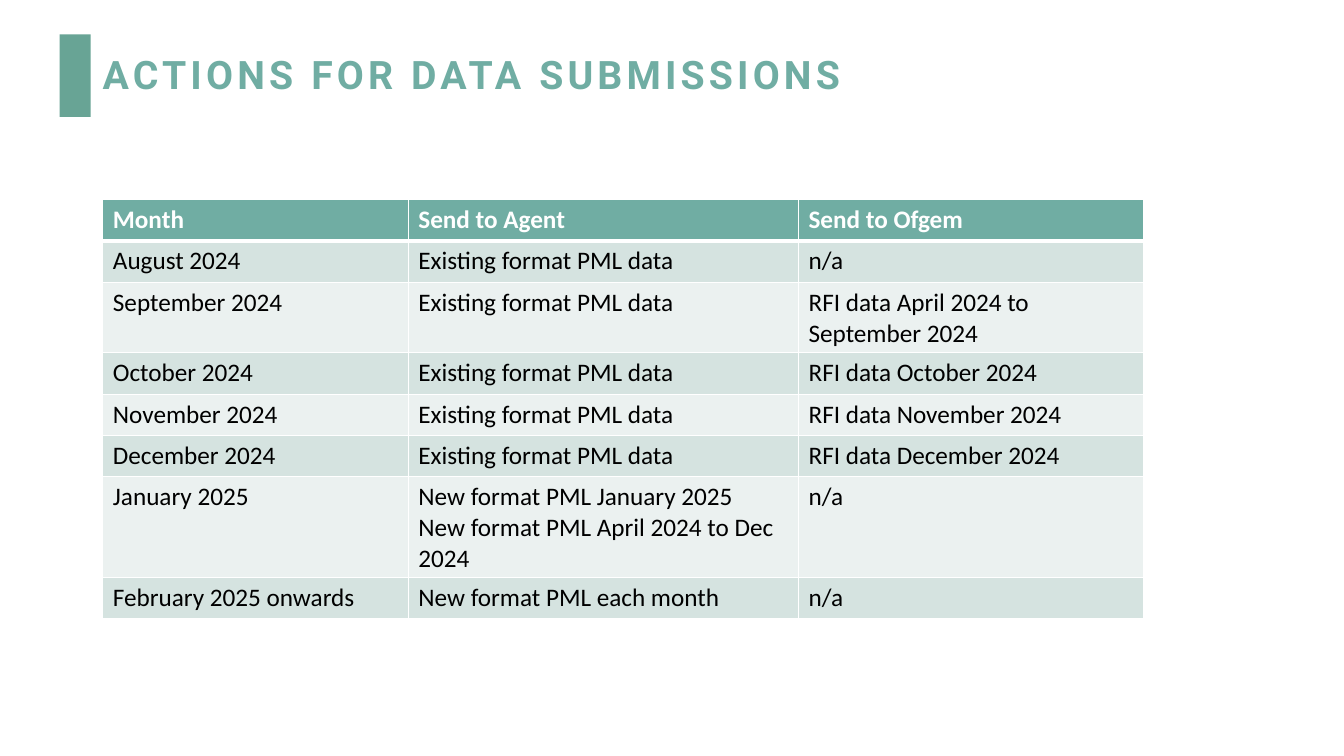
from dataclasses import dataclass

from lxml import etree
from pptx import Presentation
from pptx.dml.color import RGBColor
from pptx.enum.shapes import MSO_SHAPE
from pptx.enum.text import MSO_ANCHOR
from pptx.oxml.ns import qn
from pptx.util import Emu, Pt

RECTANGLE = MSO_SHAPE.RECTANGLE
MIDDLE = MSO_ANCHOR.MIDDLE
EMU_PER_PX = 9144
BLANK_LAYOUT = 6


@dataclass(frozen=True)
class Theme:
    accent: str = "68A495"
    heading: str = "70ADA3"
    bands: tuple = ("D5E3E0", "EBF1F0")
    white: str = "FFFFFF"
    black: str = "000000"
    title_font: str = "Roboto"
    body_font: str = "Calibri"
    title_size: int = 28
    body_size: int = 18
    title_tracking: int = 3
    border: int = 1
    header_border: int = 3


HEADER = ("Month", "Send to Agent", "Send to Ofgem")
EXISTING = "Existing format PML data"
SCHEDULE = (
    ("August 2024", EXISTING, "n/a"),
    ("September 2024", EXISTING, "RFI data April 2024 to September 2024"),
    ("October 2024", EXISTING, "RFI data October 2024"),
    ("November 2024", EXISTING, "RFI data November 2024"),
    ("December 2024", EXISTING, "RFI data December 2024"),
    ("January 2025",
     "New format PML January 2025\nNew format PML April 2024 to Dec 2024", "n/a"),
    ("February 2025 onwards", "New format PML each month", "n/a"),
)
COLUMN_WIDTHS = (303, 387, 342)
ROW_HEIGHT = 41


def px(length):
    return Emu(length * EMU_PER_PX)


class SlideBuilder:
    def __init__(self, slide, theme):
        self.slide = slide
        self.theme = theme

    def add_run(self, paragraph, text, font, size, color, bold=False):
        run = paragraph.add_run()
        run.text = text
        run.font.name = font
        run.font.size = Pt(size)
        run.font.bold = bold
        run.font.color.rgb = RGBColor.from_string(color)
        return run

    def add_bar(self, left, top, width, height):
        bar = self.slide.shapes.add_shape(
            RECTANGLE, px(left), px(top), px(width), px(height))
        bar.shadow.inherit = False
        bar.fill.solid()
        bar.fill.fore_color.rgb = RGBColor.from_string(self.theme.accent)
        bar.line.fill.background()

    def add_title(self, text, left, top, width, height):
        theme = self.theme
        box = self.slide.shapes.add_textbox(px(left), px(top), px(width), px(height))
        frame = box.text_frame
        frame.word_wrap = True
        frame.vertical_anchor = MIDDLE
        paragraph = frame.paragraphs[0]
        paragraph.line_spacing = 0.9
        run = self.add_run(paragraph, text, theme.title_font, theme.title_size,
                           theme.heading, bold=True)
        run._r.get_or_add_rPr().set("spc", str(theme.title_tracking * 100))

    def add_borders(self, cell, top, bottom):
        """Draw white cell borders; top and bottom widths are in points."""
        properties = cell._tc.get_or_add_tcPr()
        side = self.theme.border
        for tag, width in (("lnL", side), ("lnR", side), ("lnT", top), ("lnB", bottom)):
            line = etree.SubElement(properties, qn(f"a:{tag}"), w=str(Pt(width)))
            fill = etree.SubElement(line, qn("a:solidFill"))
            etree.SubElement(fill, qn("a:srgbClr"), val=self.theme.white)

    def fill_cell(self, cell, text, row_index):
        theme = self.theme
        is_header = row_index == 0
        self.add_borders(
            cell,
            top=theme.header_border if row_index == 1 else theme.border,
            bottom=theme.header_border if is_header else theme.border)
        background = theme.heading if is_header else theme.bands[(row_index - 1) % 2]
        cell.fill.solid()
        cell.fill.fore_color.rgb = RGBColor.from_string(background)
        frame = cell.text_frame
        for index, line in enumerate(text.split("\n")):
            paragraph = frame.add_paragraph() if index else frame.paragraphs[0]
            self.add_run(paragraph, line, theme.body_font, theme.body_size,
                         theme.white if is_header else theme.black, bold=is_header)

    def add_table(self, rows, left, top, column_widths, row_height):
        table = self.slide.shapes.add_table(
            len(rows), len(column_widths), px(left), px(top),
            px(sum(column_widths)), px(row_height * len(rows))).table
        for column, width in zip(table.columns, column_widths):
            column.width = px(width)
        for row_index, row in enumerate(rows):
            for column_index, text in enumerate(row):
                self.fill_cell(table.cell(row_index, column_index), text, row_index)


def main():
    presentation = Presentation()
    presentation.slide_width = px(1333)
    presentation.slide_height = px(750)
    slide = presentation.slides.add_slide(presentation.slide_layouts[BLANK_LAYOUT])
    builder = SlideBuilder(slide, Theme())
    builder.add_bar(59, 34, 31, 82)
    builder.add_title("ACTIONS FOR DATA SUBMISSIONS", 92, 40, 1015, 72)
    builder.add_table((HEADER, *SCHEDULE), 102, 198, COLUMN_WIDTHS, ROW_HEIGHT)
    presentation.save("out.pptx")


if __name__ == "__main__":
    main()
